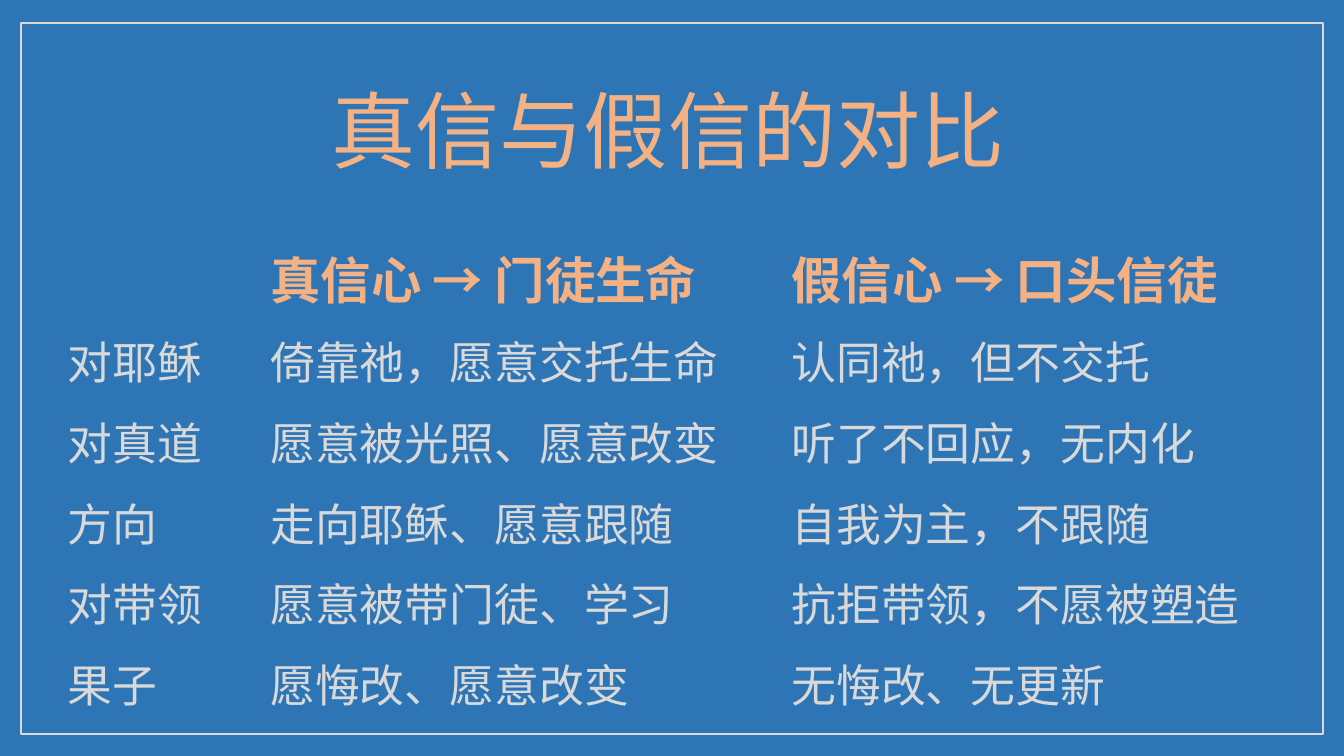
from dataclasses import dataclass

from lxml import etree
from pptx import Presentation
from pptx.dml.color import RGBColor
from pptx.enum.shapes import MSO_SHAPE
from pptx.enum.text import MSO_ANCHOR, MSO_AUTO_SIZE, PP_ALIGN
from pptx.oxml.ns import qn
from pptx.util import Inches, Pt

RECTANGLE = MSO_SHAPE.RECTANGLE
TOP, MIDDLE = MSO_ANCHOR.TOP, MSO_ANCHOR.MIDDLE
LEFT, CENTER = PP_ALIGN.LEFT, PP_ALIGN.CENTER
FIT_SHAPE = MSO_AUTO_SIZE.SHAPE_TO_FIT_TEXT
NO_GRID_STYLE = "{2D5ABB26-0587-4C30-8999-92F81FD0307C}"


@dataclass(frozen=True)
class Theme:
    background: RGBColor = RGBColor(0x2E, 0x75, 0xB6)
    accent: RGBColor = RGBColor(0xF4, 0xB1, 0x83)
    light: RGBColor = RGBColor(0xD9, 0xD9, 0xD9)
    title_size: int = 60
    heading_size: int = 36
    body_size: int = 32
    latin: str = "Calibri"
    chinese: str = "Noto Sans CJK SC"


theme = Theme()


def write(frame, text, *, size, color, font=theme.latin, bold=False,
          align=LEFT):
    paragraph = frame.paragraphs[0]
    paragraph.alignment = align
    paragraph.line_spacing = 1.5
    run = paragraph.add_run()
    run.text = text
    run.font.size = Pt(size)
    run.font.bold = bold
    run.font.color.rgb = color
    run.font.name = font
    east_asian = etree.SubElement(run.font._element, qn("a:ea"))
    east_asian.set("typeface", theme.chinese)


prs = Presentation()
prs.slide_width, prs.slide_height = Inches(13.33), Inches(7.5)
slide = prs.slides.add_slide(prs.slide_layouts[5])
slide.background.fill.solid()
slide.background.fill.fore_color.rgb = theme.background

# Title
title = slide.shapes.title
title.left, title.top = Inches(0.42), Inches(0.23)
title.width, title.height = Inches(12.41), Inches(1.61)
title.text_frame.word_wrap = True
title.text_frame.auto_size = FIT_SHAPE
title.text_frame.vertical_anchor = TOP
write(title.text_frame, "真信与假信的对比", size=theme.title_size,
      color=theme.accent, font=theme.chinese, align=CENTER)

# Border around the slide
border = slide.shapes.add_shape(
    RECTANGLE, Inches(0.21), Inches(0.23), Inches(12.91), Inches(7.05))
border.shadow.inherit = False
border.fill.background()
border.line.color.rgb = theme.light
border.line.width = Pt(1.5)

# Comparison table
comparison = [
    ("", "真信心 → 门徒生命", "假信心 → 口头信徒"),
    ("对耶稣", "倚靠祂，愿意交托生命", "认同祂，但不交托"),
    ("对真道", "愿意被光照、愿意改变", "听了不回应，无内化"),
    ("方向", "走向耶稣、愿意跟随", "自我为主，不跟随"),
    ("对带领", "愿意被带门徒、学习", "抗拒带领，不愿被塑造"),
    ("果子", "愿悔改、愿意改变", "无悔改、无更新"),
]
table_frame = slide.shapes.add_table(
    len(comparison), 3, Inches(0.67), Inches(2.03), Inches(12.12), Inches(4.9))
table = table_frame.table
table.first_row = table.horz_banding = False
for style_id in table_frame.element.iter(qn("a:tableStyleId")):
    style_id.text = NO_GRID_STYLE
for column, width in zip(table.columns, (2.01, 5.17, 4.94)):
    column.width = Inches(width)

for row_index, texts in enumerate(comparison):
    is_heading = row_index == 0
    table.rows[row_index].height = Inches(0.9 if is_heading else 0.8)
    for column_index, text in enumerate(texts):
        cell = table.cell(row_index, column_index)
        cell.fill.background()
        cell.vertical_anchor = MIDDLE
        cell.margin_left = cell.margin_right = 0
        cell.margin_top = cell.margin_bottom = 0
        if text:
            write(cell.text_frame, text, bold=is_heading,
                  size=theme.heading_size if is_heading else theme.body_size,
                  color=theme.accent if is_heading else theme.light)

prs.save("out.pptx")
